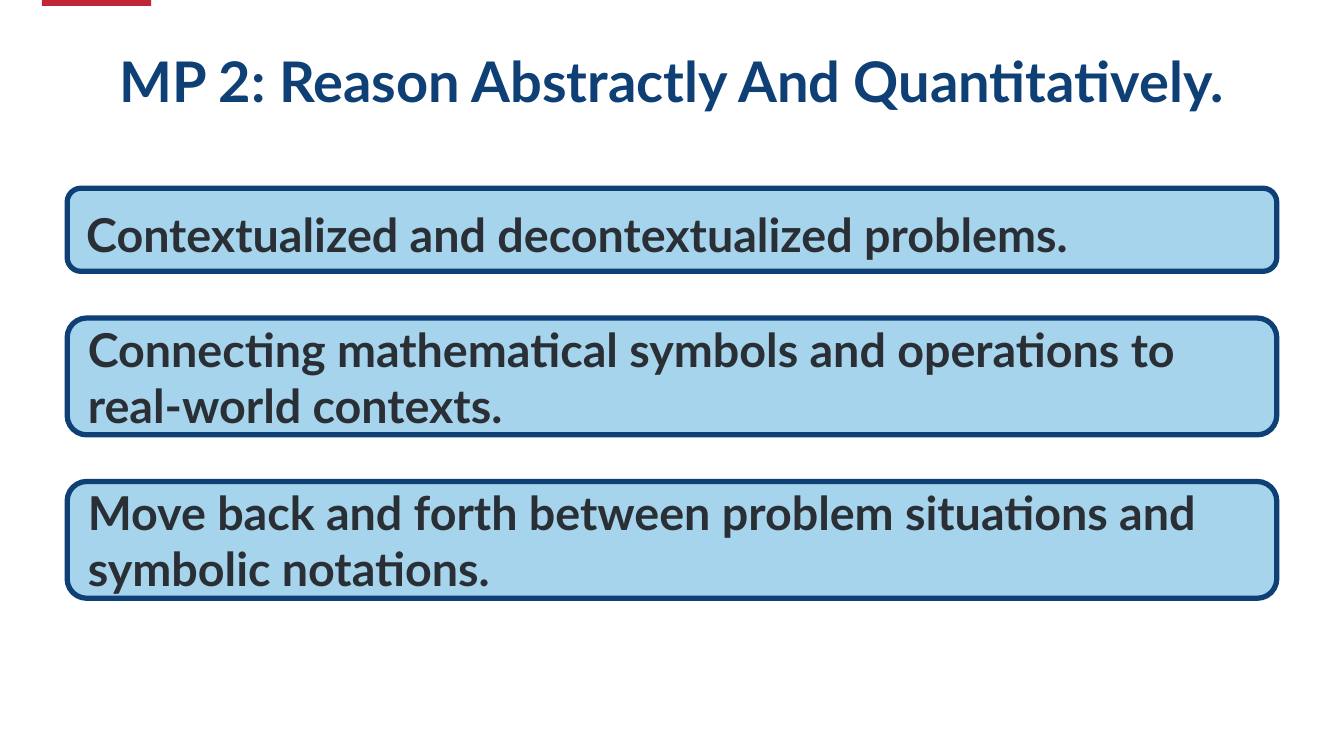
from pptx import Presentation
from pptx.dml.color import RGBColor
from pptx.enum.shapes import MSO_SHAPE
from pptx.enum.text import MSO_ANCHOR, PP_ALIGN
from pptx.util import Pt

NAVY = RGBColor(0x0E, 0x3F, 0x75)
RED = RGBColor(0xC1, 0x26, 0x37)
SKY = RGBColor(0xA6, 0xD4, 0xEC)
INK = RGBColor(0x2A, 0x2F, 0x36)

FONT = "Lato"
SLIDE_W, SLIDE_H = 1152, 648
CARD_LEFT, CARD_TOP, CARD_GAP = 57.6, 161.3, 40

# Text, card height, line spacing
CARDS = [
    ("Contextualized and decontextualized problems.", 71.3, 1.15),
    ("Connecting mathematical symbols and operations to real-world contexts.",
     100.1, 1.0),
    ("Move back and forth between problem situations and symbolic notations.",
     100.1, 1.0),
]


def set_text(sp, text, size, color, align=PP_ALIGN.LEFT,
             anchor=MSO_ANCHOR.MIDDLE, spacing=1.0, indent=0):
    tf = sp.text_frame
    tf.word_wrap = True
    tf.vertical_anchor = anchor
    p = tf.paragraphs[0]
    p.alignment = align
    p.line_spacing = spacing
    p._p.get_or_add_pPr().set("marL", str(Pt(indent)))
    r = p.add_run()
    r.text = text
    r.font.name = FONT
    r.font.size = Pt(size)
    r.font.bold = True
    r.font.color.rgb = color


def add_box(s, kind, left, top, width, height, fill, line=None):
    sp = s.shapes.add_shape(kind, Pt(left), Pt(top), Pt(width), Pt(height))
    sp.shadow.inherit = False
    sp.fill.solid()
    sp.fill.fore_color.rgb = fill
    if line is None:
        sp.line.fill.background()
    else:
        sp.line.color.rgb = line
        sp.line.width = Pt(4.5)
    return sp


def add_title(s, text):
    sp = s.shapes.add_textbox(Pt(0), Pt(43.2), Pt(SLIDE_W), Pt(71.3))
    set_text(sp, text, 48, NAVY, align=PP_ALIGN.CENTER,
             anchor=MSO_ANCHOR.TOP, spacing=0.9)


def add_cards(s):
    top = CARD_TOP
    for text, height, spacing in CARDS:
        sp = add_box(s, MSO_SHAPE.ROUNDED_RECTANGLE, CARD_LEFT, top,
                     SLIDE_W - 2 * CARD_LEFT, height, SKY, line=NAVY)
        set_text(sp, text, 40, INK, spacing=spacing, indent=5.76)
        top += height + CARD_GAP


def main():
    prs = Presentation()
    prs.slide_width, prs.slide_height = Pt(SLIDE_W), Pt(SLIDE_H)
    s = prs.slides.add_slide(prs.slide_layouts[6])

    # Red tab at the top edge
    add_box(s, MSO_SHAPE.RECTANGLE, 36, -3.6, 93.6, 8.64, RED)

    # Title and practice cards
    add_title(s, "MP 2: Reason Abstractly And Quantitatively.")
    add_cards(s)

    prs.save("out.pptx")


if __name__ == "__main__":
    main()
